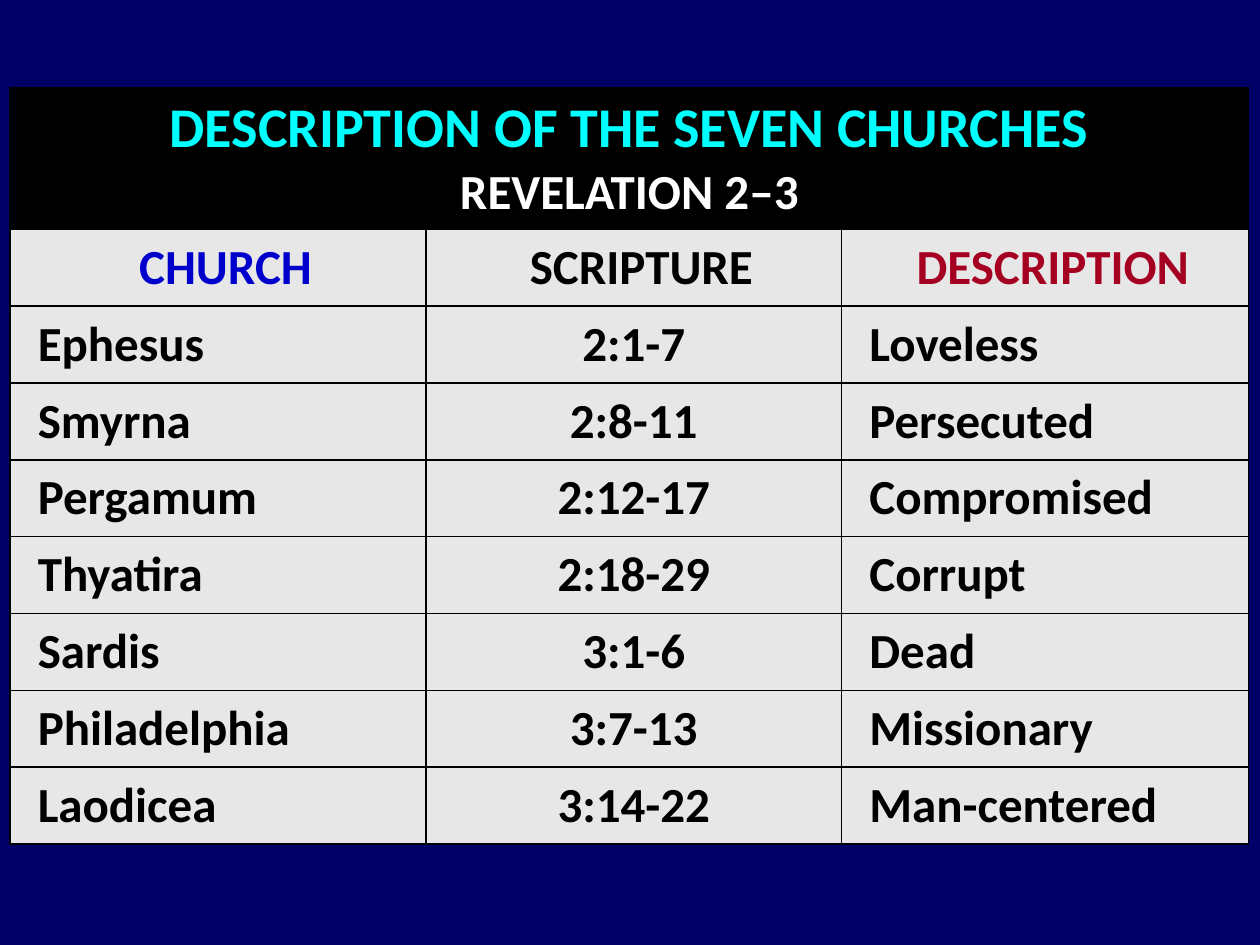
from lxml import etree
from pptx import Presentation
from pptx.dml.color import RGBColor
from pptx.enum.text import MSO_ANCHOR, PP_ALIGN
from pptx.oxml.ns import qn
from pptx.util import Inches, Pt

CENTER, LEFT = PP_ALIGN.CENTER, PP_ALIGN.LEFT
MIDDLE = MSO_ANCHOR.MIDDLE

# Content
TITLE_LINES = [
    ("DESCRIPTION OF THE SEVEN CHURCHES", 32, "00FFFF"),
    ("REVELATION 2‒3", 28, "FFFFFF"),
]
HEADINGS = [("CHURCH", "0000CC"), ("SCRIPTURE", "000000"), ("DESCRIPTION", "A50021")]
CHURCHES = [
    ("Ephesus", "2:1-7", "Loveless"),
    ("Smyrna", "2:8-11", "Persecuted"),
    ("Pergamum", "2:12-17", "Compromised"),
    ("Thyatira", "2:18-29", "Corrupt"),
    ("Sardis", "3:1-6", "Dead"),
    ("Philadelphia", "3:7-13", "Missionary"),
    ("Laodicea", "3:14-22", "Man-centered"),
]
COLUMN_WIDTHS = [3.3, 3.3, 3.23]
TITLE_HEIGHT, ROW_HEIGHT = 1.12, 0.61
SCRIPTURE_COLUMN = 1


def color(hex_value):
    return RGBColor.from_string(hex_value)


def style_font(font, size, hex_value):
    font.name = "Calibri"
    font.size = Pt(size)
    font.bold = True
    font.color.rgb = color(hex_value)


def format_cell(cell, fill):
    cell.vertical_anchor = MIDDLE
    cell.fill.solid()
    cell.fill.fore_color.rgb = color(fill)
    properties = cell._tc.get_or_add_tcPr()
    # Border lines come before the fill in the cell properties
    for position, side in enumerate(("lnL", "lnR", "lnT", "lnB")):
        line = etree.Element(qn(f"a:{side}"), w=str(Pt(1)))
        solid = etree.SubElement(line, qn("a:solidFill"))
        etree.SubElement(solid, qn("a:srgbClr"), val="000000")
        properties.insert(position, line)


def write_cell(cell, text, hex_value, alignment, indent):
    format_cell(cell, "E7E7E7")
    paragraph = cell.text_frame.paragraphs[0]
    paragraph.text = text
    paragraph.alignment = alignment
    if indent:
        paragraph._p.get_or_add_pPr().set("marL", str(Inches(indent)))
    style_font(paragraph.font, 28, hex_value)


presentation = Presentation()
presentation.slide_width, presentation.slide_height = Inches(10), Inches(7.5)
slide = presentation.slides.add_slide(presentation.slide_layouts[6])
slide.background.fill.solid()
slide.background.fill.fore_color.rgb = color("000066")

# Table grid
row_heights = [TITLE_HEIGHT] + [ROW_HEIGHT] * (len(CHURCHES) + 1)
table = slide.shapes.add_table(
    len(row_heights), len(COLUMN_WIDTHS), Inches(0.08), Inches(0.7),
    Inches(sum(COLUMN_WIDTHS)), Inches(sum(row_heights))).table
table.first_row = table.horz_banding = False
for column, width in zip(table.columns, COLUMN_WIDTHS):
    column.width = Inches(width)
for row, height in zip(table.rows, row_heights):
    row.height = Inches(height)

# Title row across all columns
title_cell = table.cell(0, 0)
title_cell.merge(table.cell(0, len(COLUMN_WIDTHS) - 1))
for column_index in range(len(COLUMN_WIDTHS)):
    format_cell(table.cell(0, column_index), "000000")
title = title_cell.text_frame.paragraphs[0]
title.alignment = CENTER
for index, (text, size, hex_value) in enumerate(TITLE_LINES):
    if index:
        title.add_line_break()
    run = title.add_run()
    run.text = text
    style_font(run.font, size, hex_value)

# Column headings
for column_index, (heading, hex_value) in enumerate(HEADINGS):
    write_cell(table.cell(1, column_index), heading, hex_value, CENTER, 0.12)

# One row per church
for row_index, church in enumerate(CHURCHES, start=2):
    for column_index, text in enumerate(church):
        centered = column_index == SCRIPTURE_COLUMN
        write_cell(table.cell(row_index, column_index), text, "000000",
                   CENTER if centered else LEFT, 0 if centered else 0.12)

presentation.save("out.pptx")
